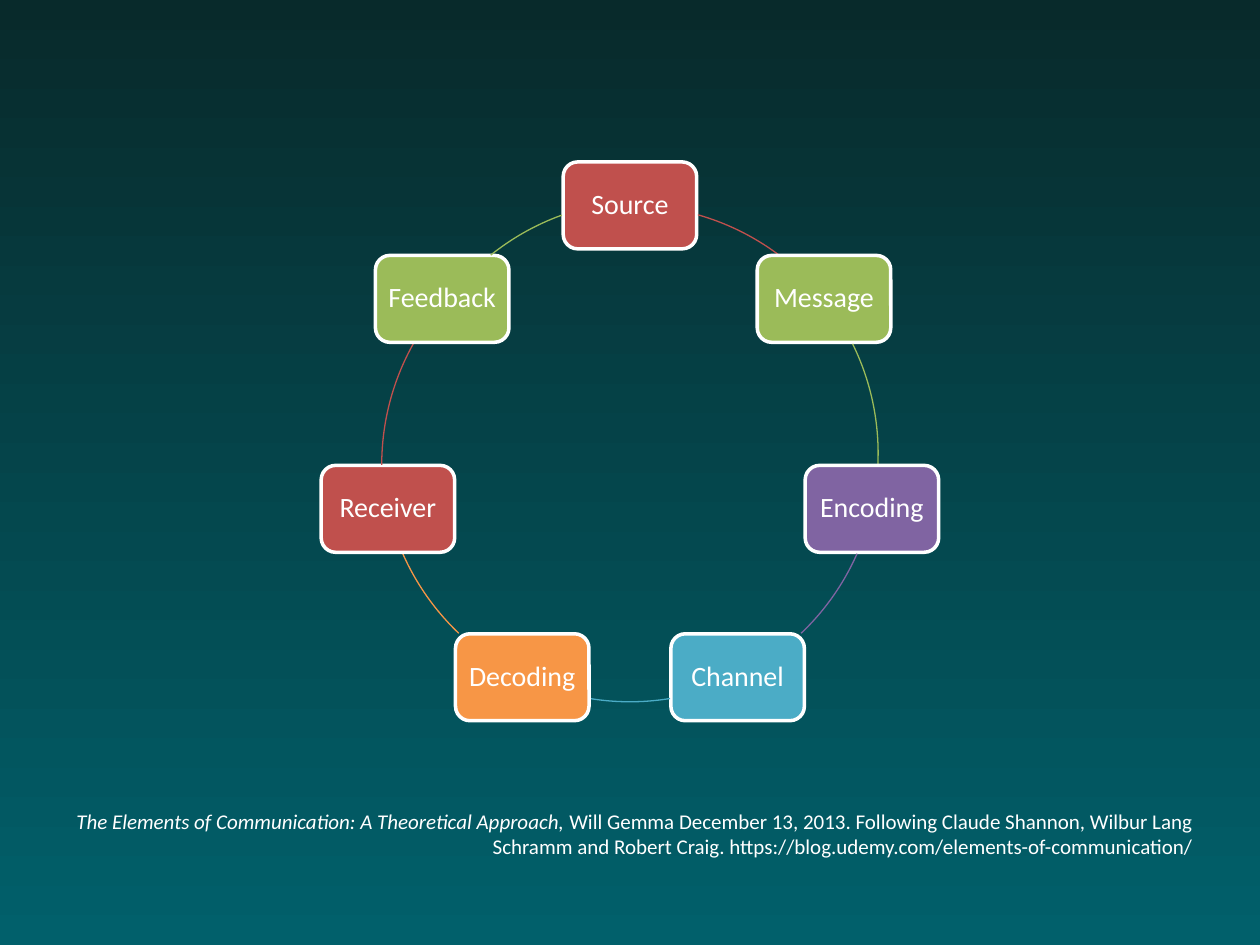
from math import cos, pi, sin

from pptx import Presentation
from pptx.dml.color import RGBColor
from pptx.enum.shapes import MSO_SHAPE as SHAPE
from pptx.enum.text import MSO_ANCHOR as ANCHOR, MSO_AUTO_SIZE as AUTO_SIZE, PP_ALIGN as ALIGN
from pptx.util import Inches, Pt

WHITE = RGBColor(0xFF, 0xFF, 0xFF)
RED = RGBColor(0xC0, 0x50, 0x4D)
GREEN = RGBColor(0x9B, 0xBB, 0x59)
PURPLE = RGBColor(0x80, 0x64, 0xA2)
BLUE = RGBColor(0x4B, 0xAC, 0xC6)
ORANGE = RGBColor(0xF7, 0x96, 0x46)
BG_TOP = RGBColor(0x08, 0x2A, 0x2B)
BG_BOTTOM = RGBColor(0x01, 0x60, 0x6B)

# Clockwise from the top: label, colour, and start and end of the arc that
# leads to the next step (degrees clockwise from east)
STEPS = [
    ("Source", RED, 285.9, 306.8),
    ("Message", GREEN, 333.8, 2.6),
    ("Encoding", PURPLE, 23.8, 46.4),
    ("Channel", BLUE, 80.7, 99.3),
    ("Decoding", ORANGE, 133.6, 156.2),
    ("Receiver", RED, 180, 209.2),
    ("Feedback", GREEN, 231.2, 250.1),
]
# Feedback sits a little inside the circle, so the arcs around it shift too
BOX_SHIFT = {"Feedback": 0.05}
ARC_SHIFT = {"Receiver": (0, 0.09), "Feedback": (0.13, -0.04)}
CITATION = [
    ("The Elements of Communication: A Theoretical Approach, ", True),
    ("Will Gemma December 13, 2013. Following Claude Shannon, Wilbur Lang Schramm "
     "and Robert Craig. https://blog.udemy.com/elements-of-communication/", False),
]

CENTER_X, CENTER_Y, RADIUS = 5, 3.6, 1.97
BOX_W, BOX_H = 1.06, 0.69
ARC_UNIT = 0.6  # adjustment value per degree


def set_margins(tf, inches):
    tf.margin_left = tf.margin_right = tf.margin_top = tf.margin_bottom = Inches(inches)


def style(font, size):
    font.name, font.size, font.color.rgb = "Calibri", Pt(size), WHITE


def add_step(s, x, y, label, color):
    """Add a rounded box centred on x, y."""
    sp = s.shapes.add_shape(SHAPE.ROUNDED_RECTANGLE, Inches(x - BOX_W / 2),
                            Inches(y - BOX_H / 2), Inches(BOX_W), Inches(BOX_H))
    sp.shadow.inherit = False
    sp.fill.solid()
    sp.fill.fore_color.rgb = color
    sp.line.color.rgb = WHITE
    sp.line.width = Pt(2)
    tf = sp.text_frame
    set_margins(tf, 0.05)
    tf.word_wrap = False
    tf.vertical_anchor = ANCHOR.MIDDLE
    p = tf.paragraphs[0]
    p.text = label
    p.alignment = ALIGN.CENTER
    p.line_spacing = 0.9
    style(p.font, 16)


def add_arc(s, x, y, start, end, color):
    """Add a part of the circle centred on x, y."""
    sp = s.shapes.add_shape(SHAPE.ARC, Inches(x - RADIUS), Inches(y - RADIUS),
                            Inches(2 * RADIUS), Inches(2 * RADIUS))
    sp.shadow.inherit = False
    sp.adjustments[0] = start * ARC_UNIT
    sp.adjustments[1] = end * ARC_UNIT
    sp.fill.background()
    sp.line.color.rgb = color
    sp.line.width = Pt(0.75)


def add_citation(s):
    tf = s.shapes.add_textbox(Inches(0.51), Inches(6.37), Inches(9.01), Inches(0.5)).text_frame
    set_margins(tf, 0.05)
    tf.word_wrap = True
    tf.auto_size = AUTO_SIZE.SHAPE_TO_FIT_TEXT
    p = tf.paragraphs[0]
    p.alignment = ALIGN.RIGHT
    style(p.font, 12)
    for text, italic in CITATION:
        r = p.add_run()
        r.text = text
        r.font.italic = italic


def main():
    prs = Presentation()
    prs.slide_width, prs.slide_height = Inches(10), Inches(7.5)
    s = prs.slides.add_slide(prs.slide_layouts[6])

    fill = s.background.fill
    fill.gradient()
    fill.gradient_angle = 270
    for stop, position, color in zip(fill.gradient_stops, (0, 1), (BG_TOP, BG_BOTTOM)):
        stop.position = position
        stop.color.rgb = color

    add_citation(s)
    for i, (label, color, start, end) in enumerate(STEPS):
        turn = 2 * pi * i / len(STEPS)
        x = CENTER_X + RADIUS * sin(turn) + BOX_SHIFT.get(label, 0)
        add_step(s, x, CENTER_Y - RADIUS * cos(turn), label, color)
        dx, dy = ARC_SHIFT.get(label, (0, 0))
        add_arc(s, CENTER_X + dx, CENTER_Y + dy, start, end, color)
    prs.save("out.pptx")


if __name__ == "__main__":
    main()
